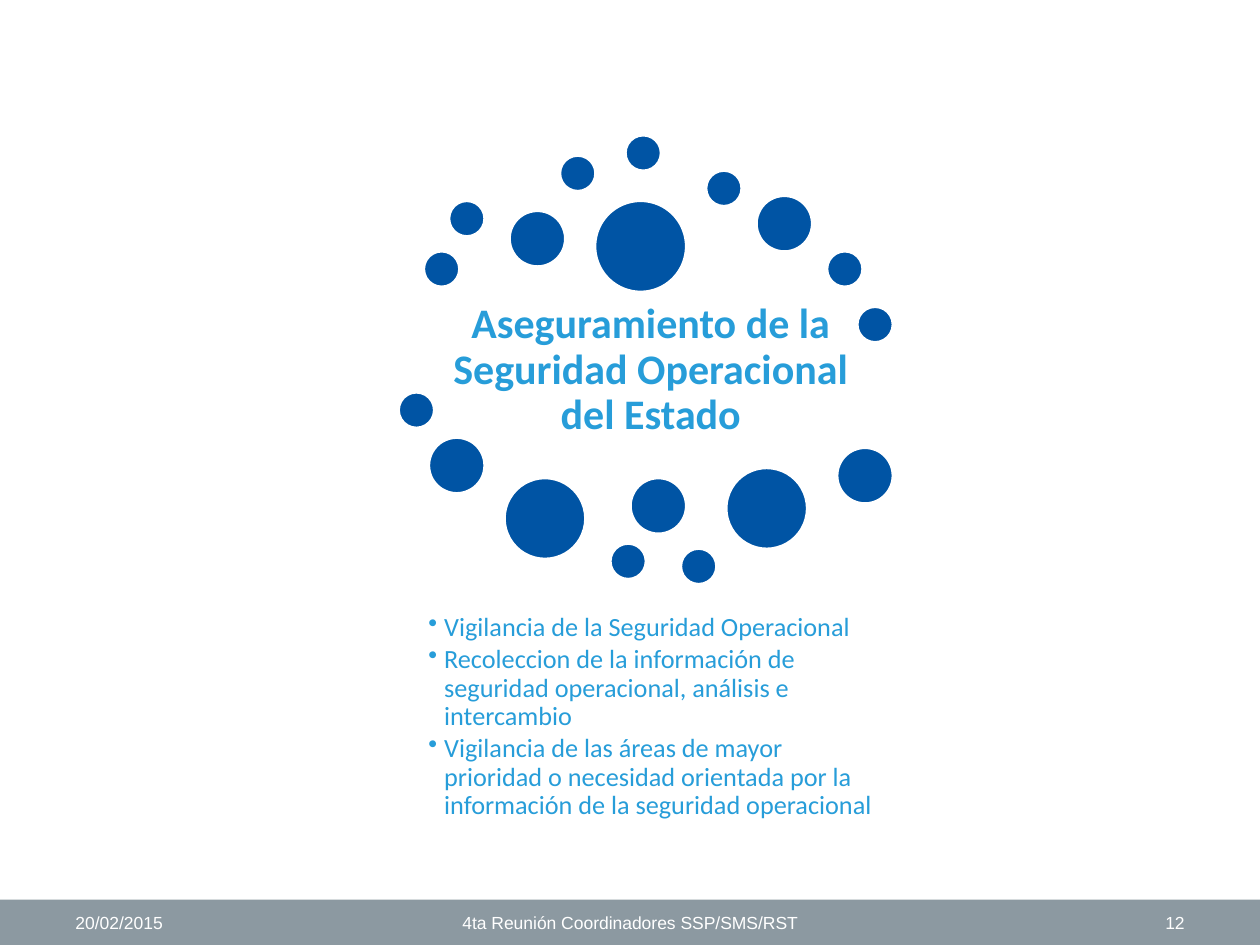
from typing import NamedTuple

from lxml.etree import SubElement
from pptx import Presentation
from pptx.dml.color import RGBColor
from pptx.enum.shapes import MSO_SHAPE
from pptx.enum.text import MSO_ANCHOR, PP_ALIGN
from pptx.oxml.ns import qn
from pptx.util import Pt

BLUE, SKY, GREY, WHITE = "0054A4", "279DD9", "8C99A1", "FFFFFF"
SMALL, MEDIUM, LARGE, HUGE = 20.9, 32.4, 46.8, 52.6
FOOTER_TOP, FOOTER_HEIGHT = 514, 26


class Dot(NamedTuple):
    left: float
    top: float
    size: float


class TextBox(NamedTuple):
    lines: list[str]
    left: float
    top: float
    width: float
    height: float
    size: float
    font: str
    color: str
    align: PP_ALIGN = PP_ALIGN.LEFT
    anchor: MSO_ANCHOR = MSO_ANCHOR.MIDDLE
    bold: bool = False
    inset: float = 2.2
    line_spacing: float = 0.9
    space_after: float = 0
    bullet_indent: float = 0


DOTS = [
    Dot(241.9, 143.3, SMALL),
    Dot(256.3, 114.5, SMALL),
    Dot(290.9, 120.2, MEDIUM),
    Dot(319.7, 88.6, SMALL),
    Dot(357.1, 77, SMALL),
    Dot(403.2, 97.2, SMALL),
    Dot(432, 111.6, MEDIUM),
    Dot(472.3, 143.3, SMALL),
    Dot(489.6, 175, SMALL),
    Dot(339.8, 114.5, HUGE),
    Dot(227.5, 223.9, SMALL),
    Dot(244.8, 249.8, MEDIUM),
    Dot(288, 272.9, LARGE),
    Dot(348.5, 310.3, SMALL),
    Dot(360, 272.9, MEDIUM),
    Dot(388.8, 313.2, SMALL),
    Dot(414.7, 267.1, LARGE),
    Dot(478.1, 255.6, MEDIUM),
]

TITLE = TextBox(
    ["Aseguramiento de la Seguridad Operacional del Estado"],
    242.6, 169.2, 258.5, 85, 24, "Calibri", SKY,
    align=PP_ALIGN.CENTER, bold=True, space_after=8.4,
)
TOPICS = TextBox(
    [
        "Vigilancia de la Seguridad Operacional",
        "Recoleccion de la información de seguridad operacional, análisis e intercambio",
        "Vigilancia de las áreas de mayor prioridad o necesidad orientada por la "
        "información de la seguridad operacional",
    ],
    242.6, 348.5, 258.5, 159.1, 15, "Calibri", SKY,
    anchor=MSO_ANCHOR.TOP, space_after=2.25, bullet_indent=9,
)


def rgb(value: str) -> RGBColor:
    return RGBColor.from_string(value)


def footer(text: str, left: float, width: float, align: PP_ALIGN) -> TextBox:
    return TextBox(
        [text], left, FOOTER_TOP, width, FOOTER_HEIGHT, 10, "Arial", WHITE,
        align=align, inset=7.2, line_spacing=1,
    )


def add_bullet(p, indent: float) -> None:
    pPr = p._p.get_or_add_pPr()
    pPr.set("marL", str(Pt(indent)))
    pPr.set("indent", str(-Pt(indent)))
    SubElement(pPr, qn("a:buChar"), char="•")


def draw_text(s, box: TextBox) -> None:
    sp = s.shapes.add_textbox(Pt(box.left), Pt(box.top), Pt(box.width), Pt(box.height))
    tf = sp.text_frame
    tf.word_wrap = True
    tf.vertical_anchor = box.anchor
    tf.margin_left = tf.margin_right = Pt(box.inset)
    tf.margin_top = tf.margin_bottom = Pt(min(box.inset, 3.6))
    tf.text = "\n".join(box.lines)
    for p in tf.paragraphs:
        p.alignment = box.align
        p.line_spacing = box.line_spacing
        p.space_after = Pt(box.space_after)
        if box.bullet_indent:
            add_bullet(p, box.bullet_indent)
        for r in p.runs:
            r.font.name = box.font
            r.font.size = Pt(box.size)
            r.font.bold = box.bold
            r.font.color.rgb = rgb(box.color)


def draw_shape(s, kind: MSO_SHAPE, left: float, top: float, width: float, height: float, fill: str):
    sp = s.shapes.add_shape(kind, Pt(left), Pt(top), Pt(width), Pt(height))
    sp.shadow.inherit = False
    sp.fill.solid()
    sp.fill.fore_color.rgb = rgb(fill)
    sp.line.fill.background()
    return sp


def draw_dot(s, dot: Dot) -> None:
    sp = draw_shape(s, MSO_SHAPE.OVAL, dot.left, dot.top, dot.size, dot.size, BLUE)
    sp.line.color.rgb = rgb(WHITE)
    sp.line.width = Pt(2)


def main() -> None:
    prs = Presentation()
    prs.slide_width, prs.slide_height = Pt(720), Pt(540)
    s = prs.slides.add_slide(prs.slide_layouts[6])
    draw_shape(s, MSO_SHAPE.RECTANGLE, 0, FOOTER_TOP, 720, FOOTER_HEIGHT, GREY)
    draw_text(s, TITLE)
    draw_text(s, TOPICS)
    for dot in DOTS:
        draw_dot(s, dot)
    draw_text(s, footer("20/02/2015", 36, 168, PP_ALIGN.LEFT))
    draw_text(s, footer("4ta Reunión Coordinadores SSP/SMS/RST", 246, 228, PP_ALIGN.CENTER))
    draw_text(s, footer("12", 516, 168, PP_ALIGN.RIGHT))
    prs.save("out.pptx")


if __name__ == "__main__":
    main()
